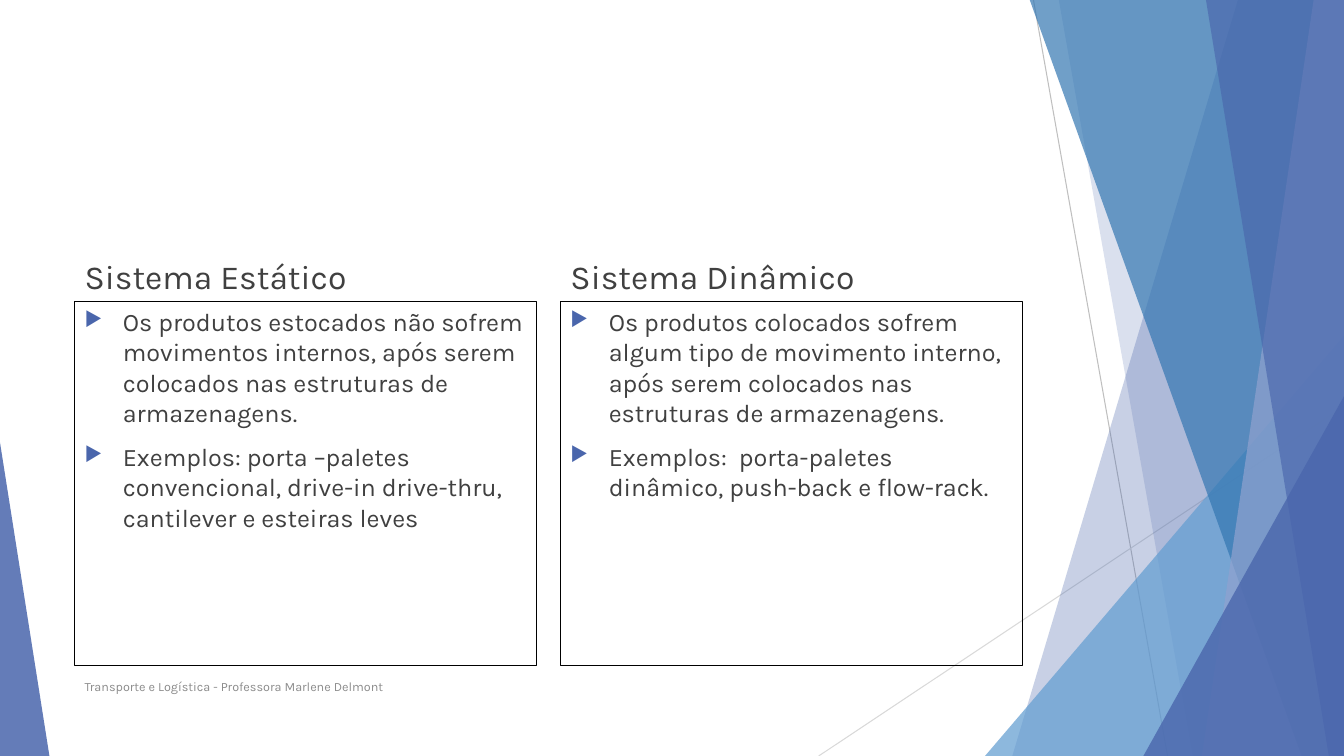
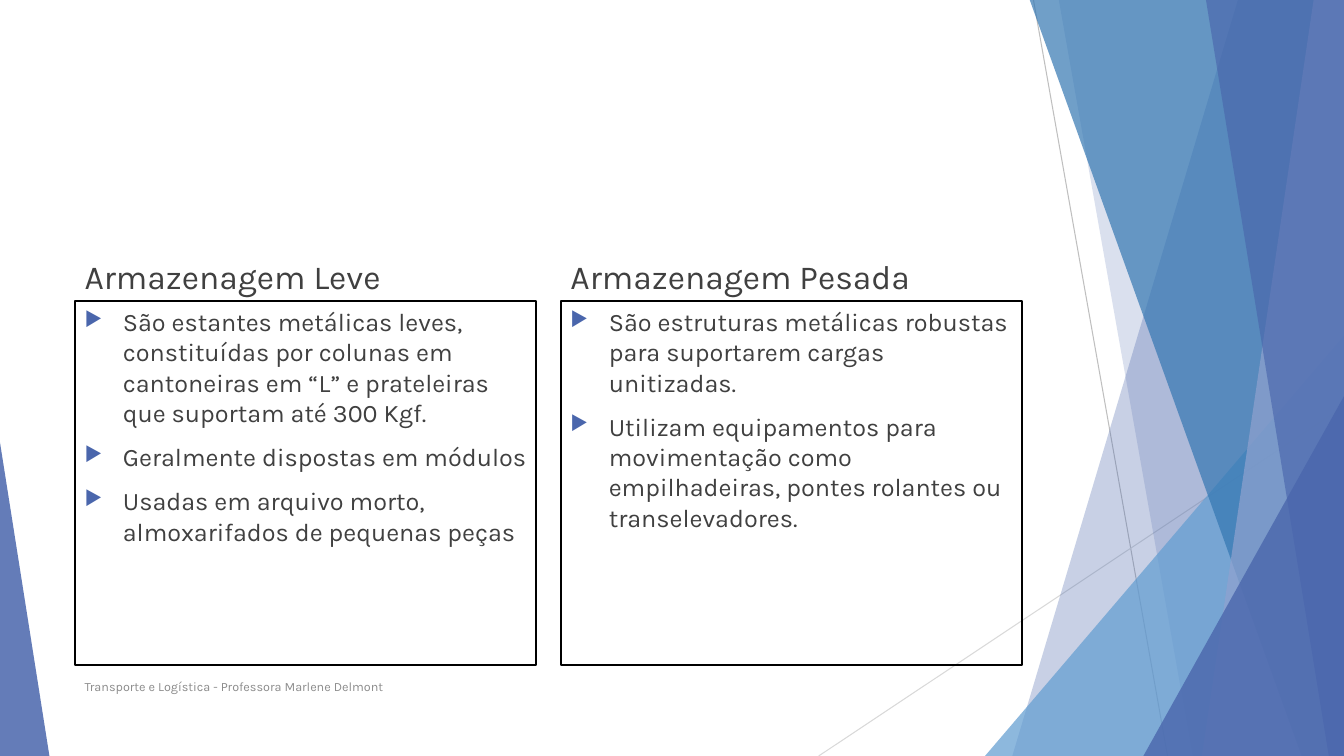
from lxml import etree
from pptx import Presentation
from pptx.dml.color import RGBColor
from pptx.enum.shapes import MSO_CONNECTOR, MSO_SHAPE
from pptx.enum.text import MSO_ANCHOR, PP_ALIGN
from pptx.oxml.ns import qn
from pptx.util import Inches, Pt

# Shared style
SLIDE_W, SLIDE_H = 13.33, 7.5
FONT = "Karla"
NAVY, SKY, OCEAN, LAVENDER = "4A66AC", "629DD1", "3477B2", "90A2CF"
TEXT, FOOTER_GREY, BLACK = "404040", "8C8C8C", "000000"
FOOTER = "Transporte e Logística - Professora Marlene Delmont"
BULLET_INDENT = 0.38

# Column grid
LEFT, TOP = 0.74, 2.36
COLUMN_W, COLUMN_GAP = 4.58, 0.24
HEADING_H, BODY_H = 0.63, 3.61

SLIDES = [
    (1, [
        ("Sistema Estático", [
            "Os produtos estocados não sofrem movimentos internos, após serem "
            "colocados nas estruturas de armazenagens.",
            "Exemplos: porta –paletes convencional, drive-in drive-thru, "
            "cantilever e esteiras leves",
        ]),
        ("Sistema Dinâmico", [
            "Os produtos colocados sofrem algum tipo de movimento interno, após "
            "serem colocados nas estruturas de armazenagens.",
            "Exemplos:  porta-paletes dinâmico, push-back e flow-rack.",
        ]),
    ]),
    (1.5, [
        ("Armazenagem Leve", [
            "São estantes metálicas leves, constituídas por colunas em "
            "cantoneiras em “L” e prateleiras que suportam até 300 Kgf.",
            "Geralmente dispostas em módulos",
            "Usadas em arquivo morto, almoxarifados de pequenas peças",
        ]),
        ("Armazenagem Pesada", [
            "São estruturas metálicas robustas para suportarem cargas unitizadas.",
            "Utilizam equipamentos para movimentação como empilhadeiras, pontes "
            "rolantes ou transelevadores.",
        ]),
    ]),
]


def rgb(value):
    return RGBColor.from_string(value)


def paint(shape, color, opacity):
    """Fill a facet with a see-through colour, without outline or shadow."""
    shape.shadow.inherit = False
    shape.line.fill.background()
    shape.fill.solid()
    shape.fill.fore_color.rgb = rgb(color)
    color_node = shape.fill._xPr.find(qn("a:solidFill"))[0]
    etree.SubElement(color_node, qn("a:alpha"), val=str(opacity * 1000))


def add_ray(slide, start, end, color):
    ray = slide.shapes.add_connector(
        MSO_CONNECTOR.STRAIGHT, *(Inches(v) for v in (*start, *end)))
    ray.line.color.rgb = rgb(color)
    ray.line.width = Pt(0.75)
    etree.SubElement(ray._element.spPr, qn("a:effectLst"))


def add_band(slide, top_x, bottom_x, color, opacity):
    """Full-height facet from a slanted left edge to the slide's right edge."""
    top, bottom, right = Inches(-0.01), Inches(SLIDE_H), Inches(SLIDE_W)
    outline = slide.shapes.build_freeform(Inches(top_x), top)
    outline.add_line_segments(
        [(right, top), (right, bottom), (Inches(bottom_x), bottom)], close=True)
    paint(outline.convert_to_shape(), color, opacity)


def add_corner(slide, left, top, width, apex, color, opacity):
    """Triangle standing on the slide's bottom edge."""
    corner = slide.shapes.add_shape(
        MSO_SHAPE.ISOSCELES_TRIANGLE, Inches(left), Inches(top),
        Inches(width), Inches(SLIDE_H - top))
    corner.adjustments[0] = apex
    paint(corner, color, opacity)


def add_facets(slide):
    add_ray(slide, (10.25, 0), (11.58, SLIDE_H), "BFBFBF")
    add_ray(slide, (SLIDE_W, 4.03), (8.12, SLIDE_H), "D9D9D9")
    add_band(slide, 12.28, 10.04, NAVY, 30)
    add_band(slide, 10.5, 11.83, NAVY, 20)
    add_corner(slide, 9.77, 3.33, 3.56, 1, SKY, 72)
    add_band(slide, 10.21, 12.91, OCEAN, 70)
    add_band(slide, 13.03, 11.92, LAVENDER, 70)
    add_band(slide, 11.96, 13.18, NAVY, 65)
    add_corner(slide, 11.34, 3.93, 1.99, 1, NAVY, 80)
    add_corner(slide, 0, 4.39, 0.49, 0, NAVY, 85)


def add_bullet(paragraph):
    properties = paragraph._p.get_or_add_pPr()
    properties.set("marL", str(Inches(BULLET_INDENT)))
    properties.set("indent", str(-Inches(BULLET_INDENT)))
    bullet_color = etree.SubElement(properties, qn("a:buClr"))
    etree.SubElement(bullet_color, qn("a:srgbClr"), val=NAVY)
    etree.SubElement(properties, qn("a:buSzPct"), val="80000")
    etree.SubElement(properties, qn("a:buChar"), char="▶")


def add_text(slide, box, lines, size, color=TEXT, anchor=MSO_ANCHOR.TOP,
             space_before=0, bulleted=False):
    area = slide.shapes.add_textbox(*(Inches(v) for v in box))
    frame = area.text_frame
    frame.word_wrap = True
    frame.vertical_anchor = anchor
    frame.text = "\n".join(lines)
    for paragraph in frame.paragraphs:
        if bulleted:
            add_bullet(paragraph)
        paragraph.alignment = PP_ALIGN.LEFT
        paragraph.space_before = Pt(space_before)
        paragraph.font.name = FONT
        paragraph.font.size = Pt(size)
        paragraph.font.color.rgb = rgb(color)
    return area


def add_column(slide, left, top, heading, points, border):
    add_text(slide, (left, top, COLUMN_W, HEADING_H), [heading], 24,
             anchor=MSO_ANCHOR.BOTTOM, space_before=10)
    body = add_text(slide, (left, top + HEADING_H, COLUMN_W, BODY_H), points, 18,
                    space_before=10, bulleted=True)
    body.line.color.rgb = rgb(BLACK)
    body.line.width = Pt(border)


def add_comparison(presentation, border, columns):
    slide = presentation.slides.add_slide(presentation.slide_layouts[6])
    add_facets(slide)
    for index, (heading, points) in enumerate(columns):
        left = LEFT + index * (COLUMN_W + COLUMN_GAP)
        add_column(slide, left, TOP, heading, points, border)
    add_text(slide, (LEFT, 6.61, 6.89, 0.4), [FOOTER], 9, FOOTER_GREY,
             MSO_ANCHOR.MIDDLE)


def main():
    presentation = Presentation()
    presentation.slide_width = Inches(SLIDE_W)
    presentation.slide_height = Inches(SLIDE_H)
    for border, columns in SLIDES:
        add_comparison(presentation, border, columns)
    presentation.save("out.pptx")


if __name__ == "__main__":
    main()
